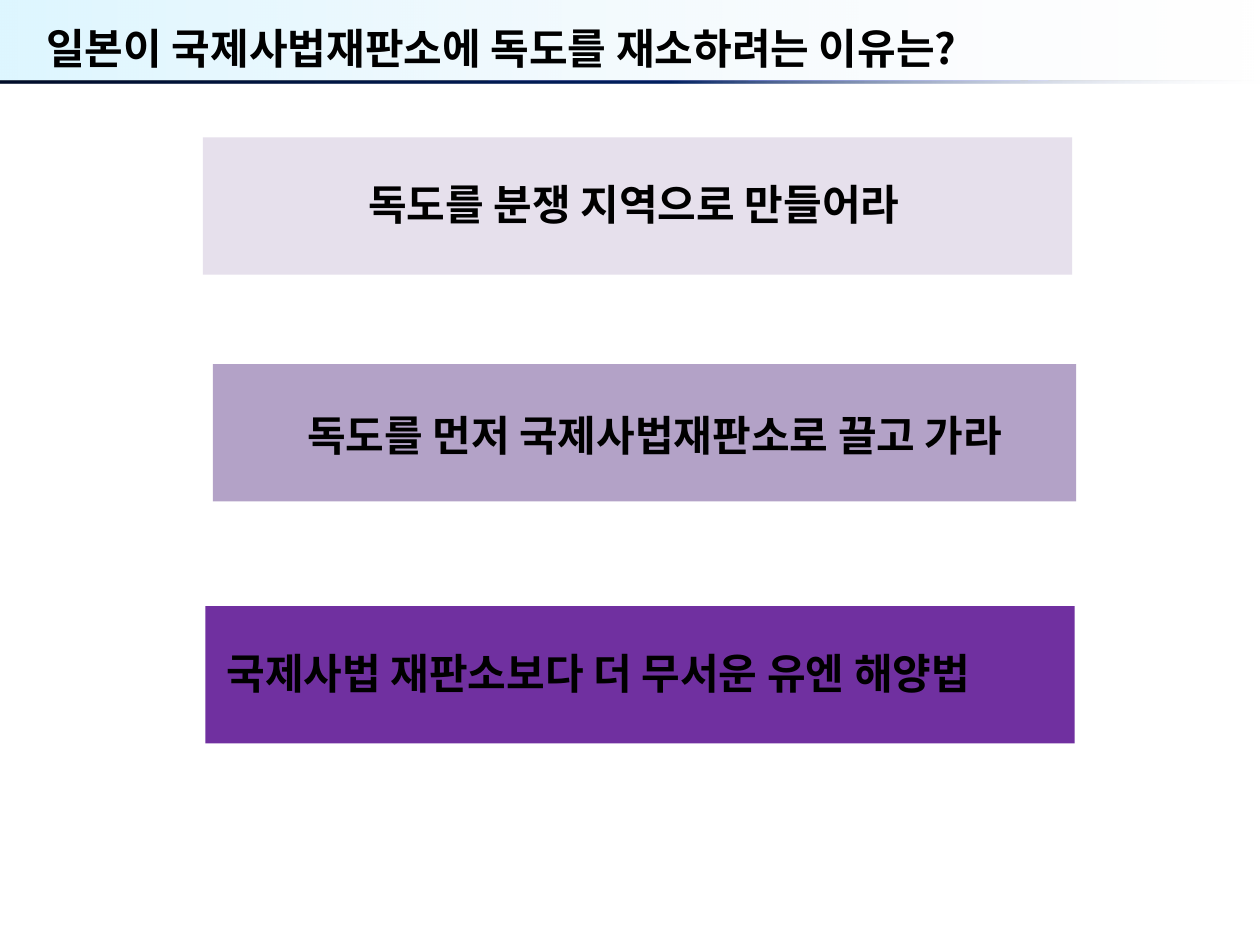
from lxml.etree import SubElement
from pptx import Presentation
from pptx.dml.color import RGBColor
from pptx.enum.shapes import MSO_SHAPE
from pptx.enum.text import MSO_ANCHOR, PP_ALIGN
from pptx.oxml.ns import qn
from pptx.util import Inches, Pt

FONT = "Noto Sans CJK KR"


def add_bar(left, top, width, height, color):
    bar = slide.shapes.add_shape(
        MSO_SHAPE.RECTANGLE, Inches(left), Inches(top), Inches(width), Inches(height)
    )
    bar.shadow.inherit = False
    bar.line.fill.background()
    bar.fill.solid()
    bar.fill.fore_color.rgb = RGBColor.from_string(color)
    return bar


def add_label(left, top, width, text, align):
    label = slide.shapes.add_textbox(Inches(left), Inches(top), Inches(width), Inches(0.5))
    frame = label.text_frame
    frame.word_wrap = True
    frame.vertical_anchor = MSO_ANCHOR.TOP
    frame.text = text
    frame.paragraphs[0].alignment = align
    run = frame.paragraphs[0].runs[0]
    run.font.size = Pt(24)
    run.font.bold = True
    run.font.color.rgb = RGBColor.from_string("000000")
    run.font.name = FONT
    SubElement(run.font._element, qn("a:ea"), typeface=FONT)
    return label


prs = Presentation()
prs.slide_width = Inches(10)
prs.slide_height = Inches(7.5)
slide = prs.slides.add_slide(prs.slide_layouts[6])

header_bars = [
    (0, 0.65, [(0, "ABE9FF", 40), (100, "E1E8F5", 0)]),
    (0.64, 0.02, [(0, "000E2A", 100), (53, "002060", 100), (100, "E1E8F5", 0)]),
]
for top, height, stops in header_bars:
    header = add_bar(0, top, 10, height, stops[0][1])
    header.fill.gradient()
    header.fill.gradient_angle = 0
    stop_list = header._element.spPr.find(qn("a:gradFill")).find(qn("a:gsLst"))
    for default_stop in list(stop_list):
        stop_list.remove(default_stop)
    for position, color, opacity in stops:
        stop = SubElement(stop_list, qn("a:gs"), pos=str(position * 1000))
        stop_color = SubElement(stop, qn("a:srgbClr"), val=color)
        SubElement(stop_color, qn("a:alpha"), val=str(opacity * 1000))

title = add_label(0.27, 0.13, 9, "일본이 국제사법재판소에 독도를 재소하려는 이유는?", PP_ALIGN.LEFT)
title.text_frame.vertical_anchor = MSO_ANCHOR.MIDDLE

reasons = [
    (1.61, 1.09, 6.9, "E6E0EC", 1.79, 1.37, 6.48, "독도를 분쟁 지역으로 만들어라", PP_ALIGN.CENTER),
    (1.69, 2.89, 6.85, "B3A2C7", 1.69, 3.2, 7.01, "독도를 먼저 국제사법재판소로 끌고 가라", PP_ALIGN.CENTER),
    (1.63, 4.81, 6.9, "7030A0", 1.7, 5.09, 6.9, "국제사법 재판소보다 더 무서운 유엔 해양법", PP_ALIGN.LEFT),
]
for left, top, width, color, text_left, text_top, text_width, text, align in reasons:
    add_bar(left, top, width, 1.09, color)
    add_label(text_left, text_top, text_width, text, align)

prs.save("out.pptx")
